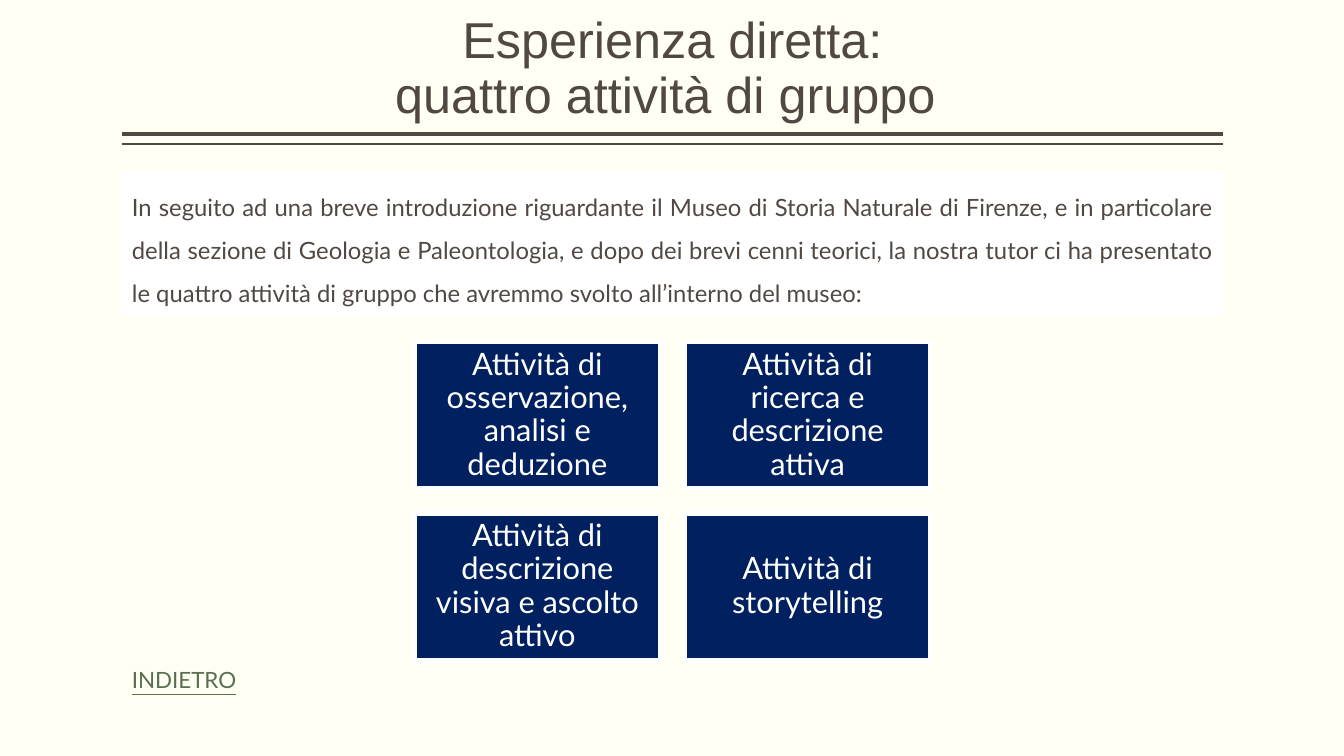
import pptx
import pptx.dml.color
import pptx.enum.shapes
import pptx.enum.text
import pptx.oxml.ns
import pptx.util
from lxml import etree

Inches = pptx.util.Inches
Align = pptx.enum.text.PP_ALIGN
Anchor = pptx.enum.text.MSO_ANCHOR

BROWN, NAVY, WHITE, GREEN, IVORY = "514843", "002060", "FFFFFF", "59704F", "FFFFF3"
MARGIN, CONTENT_WIDTH = 1.21, 10.92
GRID_LEFT, GRID_TOP = 4.11, 3.39
CARD_WIDTH, CARD_HEIGHT = 2.44, 1.46
COLUMN_STEP, ROW_STEP = 2.68, 1.7
ACTIVITIES = [
    "Attività di osservazione, analisi e deduzione",
    "Attività di ricerca e descrizione attiva",
    "Attività di descrizione visiva e ascolto attivo",
    "Attività di storytelling",
]
INTRODUCTION = (
    "In seguito ad una breve introduzione riguardante il Museo di Storia Naturale "
    "di Firenze, e in particolare della sezione di Geologia e Paleontologia, e dopo "
    "dei brevi cenni teorici, la nostra tutor ci ha presentato le quattro attività "
    "di gruppo che avremmo svolto all’interno del museo:"
)


def paint(color_format, hex_color):
    """Apply a hex colour to a colour format."""
    color_format.rgb = pptx.dml.color.RGBColor.from_string(hex_color)


def write(shape, text, size, color, font="Lato", align=Align.LEFT,
          anchor=Anchor.TOP, spacing=1.0, insets=(0.1, 0.05)):
    """Fill a shape with one formatted paragraph and return it."""
    frame = shape.text_frame
    frame.word_wrap = True
    frame.auto_size = pptx.enum.text.MSO_AUTO_SIZE.NONE
    frame.vertical_anchor = anchor
    frame.margin_left = frame.margin_right = Inches(insets[0])
    frame.margin_top = frame.margin_bottom = Inches(insets[1])
    paragraph = frame.paragraphs[0]
    paragraph.text = text
    paragraph.alignment = align
    paragraph.line_spacing = spacing
    paragraph.font.name = font
    paragraph.font.size = pptx.util.Pt(size)
    paint(paragraph.font.color, color)
    return paragraph


def add_title(slide, text):
    """Place and format the title placeholder."""
    title = slide.shapes.title
    title.left, title.top = Inches(MARGIN), Inches(0.08)
    title.width, title.height = Inches(CONTENT_WIDTH), Inches(1.2)
    write(title, text, 36, BROWN, "Arial", Align.CENTER, Anchor.BOTTOM, 0.9, (0, 0.05))


def add_rule(slide, top, weight):
    """Draw a horizontal rule across the content width."""
    rule = slide.shapes.add_connector(
        pptx.enum.shapes.MSO_CONNECTOR.STRAIGHT,
        Inches(MARGIN), Inches(top), Inches(MARGIN + CONTENT_WIDTH), Inches(top))
    paint(rule.line.color, BROWN)
    rule.line.width = pptx.util.Pt(weight)
    etree.SubElement(rule._element.spPr, pptx.oxml.ns.qn("a:effectLst"))


def add_panel(slide, left, top, width, height, fill):
    """Add a filled rectangle with a white border."""
    panel = slide.shapes.add_shape(
        pptx.enum.shapes.MSO_SHAPE.RECTANGLE,
        Inches(left), Inches(top), Inches(width), Inches(height))
    panel.shadow.inherit = False
    panel.fill.solid()
    paint(panel.fill.fore_color, fill)
    paint(panel.line.color, WHITE)
    panel.line.width = pptx.util.Pt(3.78)
    return panel


def add_activities(slide):
    """Lay out the activity cards in two columns."""
    for index, activity in enumerate(ACTIVITIES):
        row, column = divmod(index, 2)
        card = add_panel(slide, GRID_LEFT + column * COLUMN_STEP,
                         GRID_TOP + row * ROW_STEP, CARD_WIDTH, CARD_HEIGHT, NAVY)
        write(card, activity, 22, WHITE, align=Align.CENTER,
              anchor=Anchor.MIDDLE, spacing=0.9, insets=(0.09, 0.09))


def add_back_label(slide):
    """Add the underlined label that leads back."""
    label = slide.shapes.add_textbox(
        Inches(MARGIN), Inches(6.56), Inches(1.31), Inches(0.37))
    write(label, "INDIETRO", 16, GREEN).font.underline = True


def main():
    """Build the slide and save it."""
    deck = pptx.Presentation()
    deck.slide_width, deck.slide_height = Inches(13.33), Inches(7.5)
    slide = deck.slides.add_slide(deck.slide_layouts.get_by_name("Title Only"))
    slide.background.fill.solid()
    paint(slide.background.fill.fore_color, IVORY)
    add_rule(slide, 1.33, 3)
    add_rule(slide, 1.43, 1)
    add_title(slide, "Esperienza diretta:\nquattro attività di gruppo ")
    introduction = add_panel(slide, MARGIN, 1.72, CONTENT_WIDTH, 1.39, WHITE)
    write(introduction, INTRODUCTION, 17, BROWN, align=Align.JUSTIFY, spacing=1.5)
    add_back_label(slide)
    add_activities(slide)
    deck.save("out.pptx")


if __name__ == "__main__":
    main()
